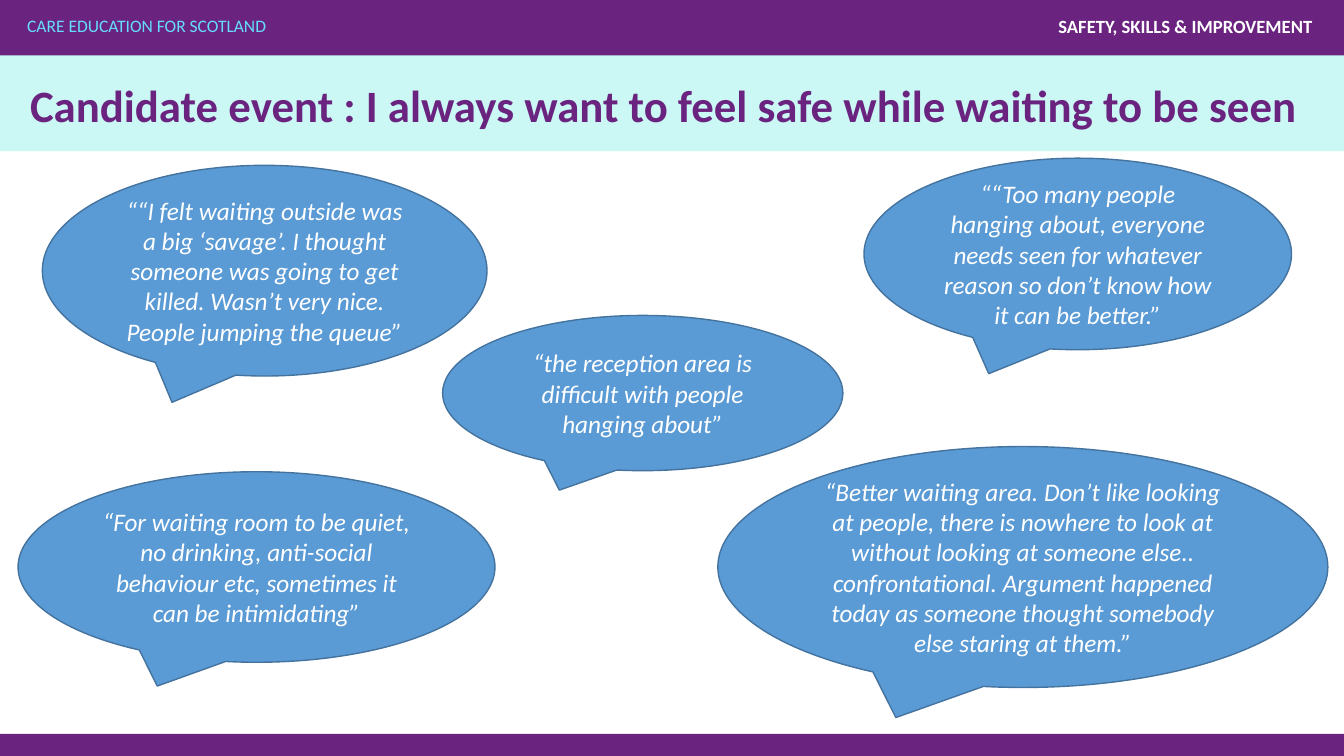
from pptx import Presentation
from pptx.dml.color import RGBColor
from pptx.enum.shapes import MSO_SHAPE as Preset
from pptx.enum.text import MSO_ANCHOR as Anchor, MSO_AUTO_SIZE as AutoSize, PP_ALIGN as Align
from pptx.util import Inches, Pt

PURPLE = RGBColor(0x6A, 0x24, 0x80)
MINT = RGBColor(0xCB, 0xF7, 0xF4)
CYAN = RGBColor(0x66, 0xDC, 0xFF)
WHITE = RGBColor(0xFF, 0xFF, 0xFF)
BLUE = RGBColor(0x5B, 0x9B, 0xD5)
DARK_BLUE = RGBColor(0x43, 0x73, 0x9E)

SLIDE_WIDTH, SLIDE_HEIGHT = 13.33, 7.5

QUOTES = [
    ((0.18, 4.68, 4.73, 1.89),
     "“For waiting room to be quiet, no drinking, anti-social behaviour etc, "
     "sometimes it can be intimidating”"),
    ((0.42, 1.64, 4.41, 2.09),
     "““I felt waiting outside was a big ‘savage’. I thought someone was going "
     "to get killed. Wasn’t very nice. People jumping the queue”"),
    ((4.39, 3.13, 3.97, 1.54),
     "“the reception area is difficult with people hanging about”"),
    ((7.12, 4.43, 6.05, 2.39),
     "“Better waiting area. Don’t like looking at people, there is nowhere to "
     "look at without looking at someone else.. confrontational. Argument "
     "happened today as someone thought somebody else staring at them.”"),
    ((8.57, 1.57, 4.24, 1.9),
     "““Too many people hanging about, everyone needs seen for whatever reason "
     "so don’t know how it can be better.”"),
]


def write(frame, text, size, color, align, bold=False, italic=False):
    frame.word_wrap = True
    paragraph = frame.paragraphs[0]
    paragraph.alignment = align
    run = paragraph.add_run()
    run.text = text
    font = run.font
    font.name, font.size = "Calibri", Pt(size)
    font.bold, font.italic = bold, italic
    font.color.rgb = color
    return paragraph


def add_filled(slide, preset, box, color):
    shape = slide.shapes.add_shape(preset, *map(Inches, box))
    shape.shadow.inherit = False
    shape.fill.solid()
    shape.fill.fore_color.rgb = color
    shape.line.fill.background()
    return shape


def add_label(slide, box, text, size, color, align, bold=False):
    frame = slide.shapes.add_textbox(*map(Inches, box)).text_frame
    frame.margin_left = frame.margin_right = 0
    frame.margin_top = frame.margin_bottom = 0
    write(frame, text, size, color, align, bold)


def add_header(slide, box):
    left, top, width, height = box
    add_filled(slide, Preset.RECTANGLE, box, MINT)
    add_filled(slide, Preset.RECTANGLE, (left, top, width, 0.57), PURPLE)
    label_top = top + 0.17
    add_label(slide, (left + 0.27, label_top, 5.47, 0.21),
              "CARE EDUCATION FOR SCOTLAND", 12.5, CYAN, Align.LEFT)
    add_label(slide, (left + width - 6.28, label_top, 5.97, 0.22),
              "SAFETY, SKILLS & IMPROVEMENT", 13.3, WHITE, Align.RIGHT, bold=True)


def add_footer(slide, box):
    add_filled(slide, Preset.RECTANGLE, box, PURPLE)


def add_title(slide, box):
    title = slide.shapes.title
    title.left, title.top, title.width, title.height = map(Inches, box)
    frame = title.text_frame
    frame.auto_size = AutoSize.NONE
    frame.vertical_anchor = Anchor.MIDDLE
    heading = write(frame, "Candidate event : I always want to feel safe while waiting to be seen",
                    32, PURPLE, Align.CENTER, bold=True)
    heading.line_spacing = 0.9


def add_quote(slide, box, text):
    bubble = add_filled(slide, Preset.OVAL_CALLOUT, box, BLUE)
    bubble.line.color.rgb = DARK_BLUE
    bubble.line.width = Pt(1)
    bubble.text_frame.vertical_anchor = Anchor.MIDDLE
    write(bubble.text_frame, text, 18, WHITE, Align.CENTER, italic=True)


def main():
    deck = Presentation()
    deck.slide_width, deck.slide_height = Inches(SLIDE_WIDTH), Inches(SLIDE_HEIGHT)
    slide = deck.slides.add_slide(deck.slide_layouts[5])
    add_header(slide, (0, -0.02, SLIDE_WIDTH, 1.52))
    add_footer(slide, (0, 7.28, SLIDE_WIDTH, 0.23))
    title = slide.shapes.title
    slide.shapes.element.append(title.element)
    add_title(slide, (0, 0.23, 13.17, 1.69))
    for box, text in QUOTES:
        add_quote(slide, box, text)
    deck.save("out.pptx")


if __name__ == "__main__":
    main()
